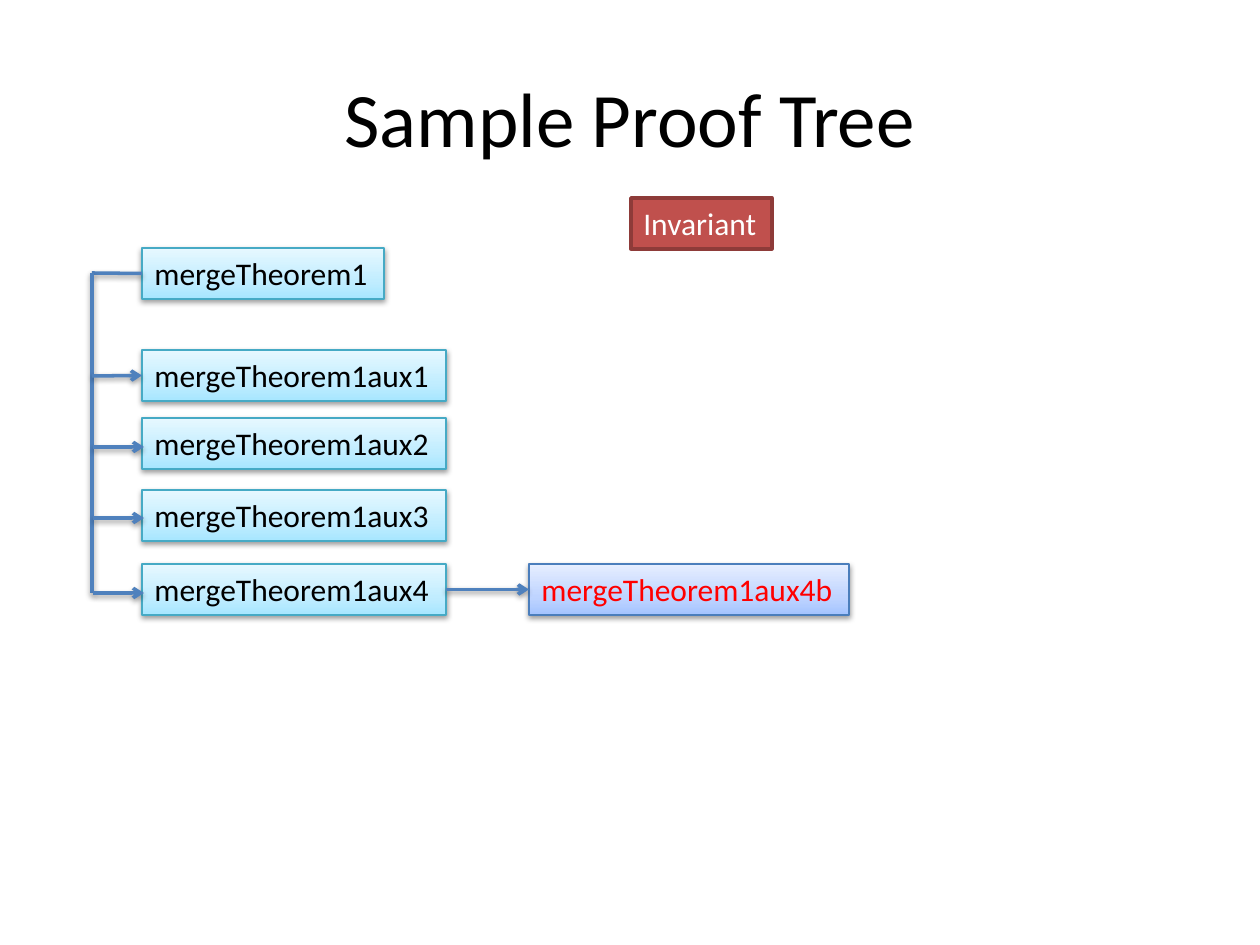
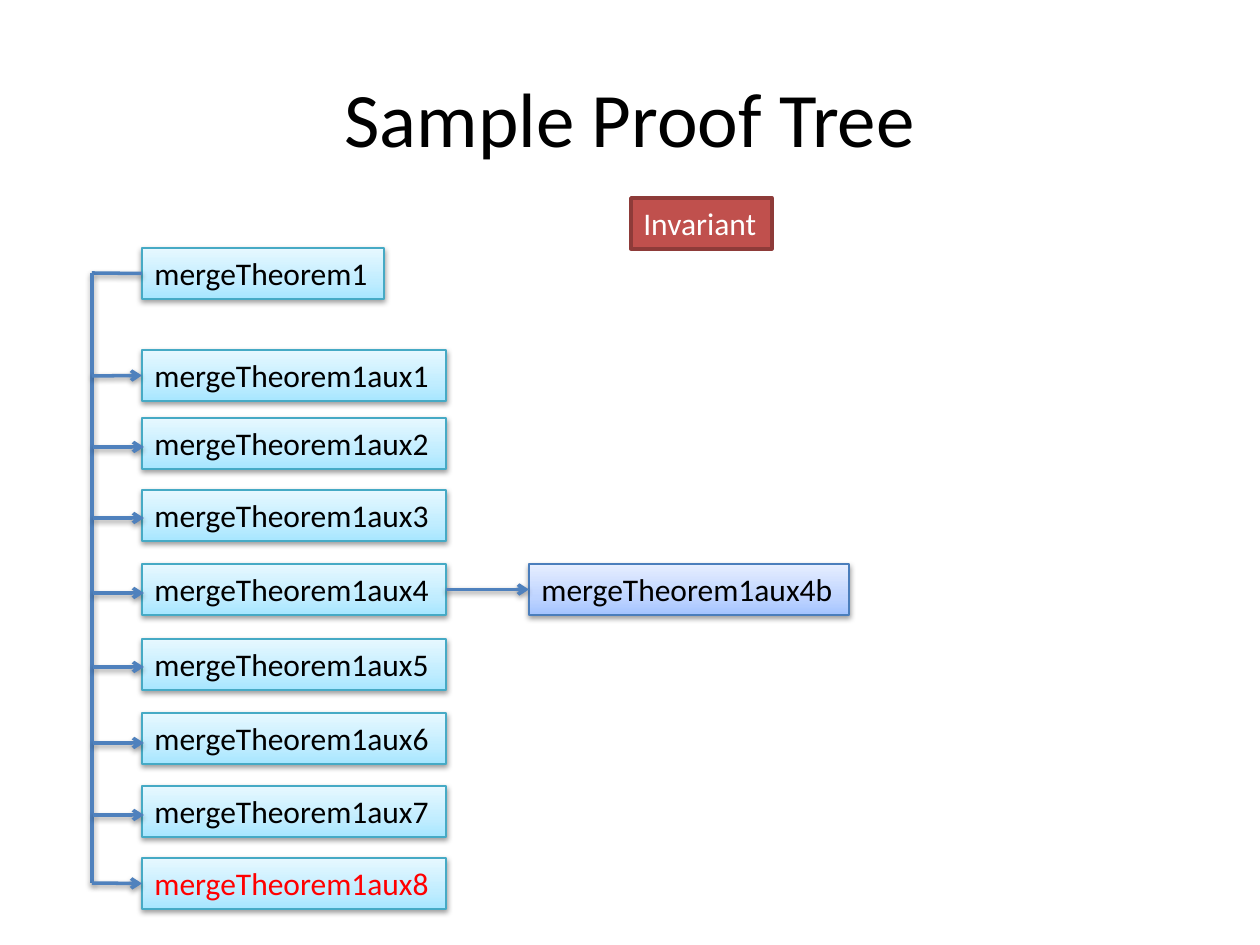
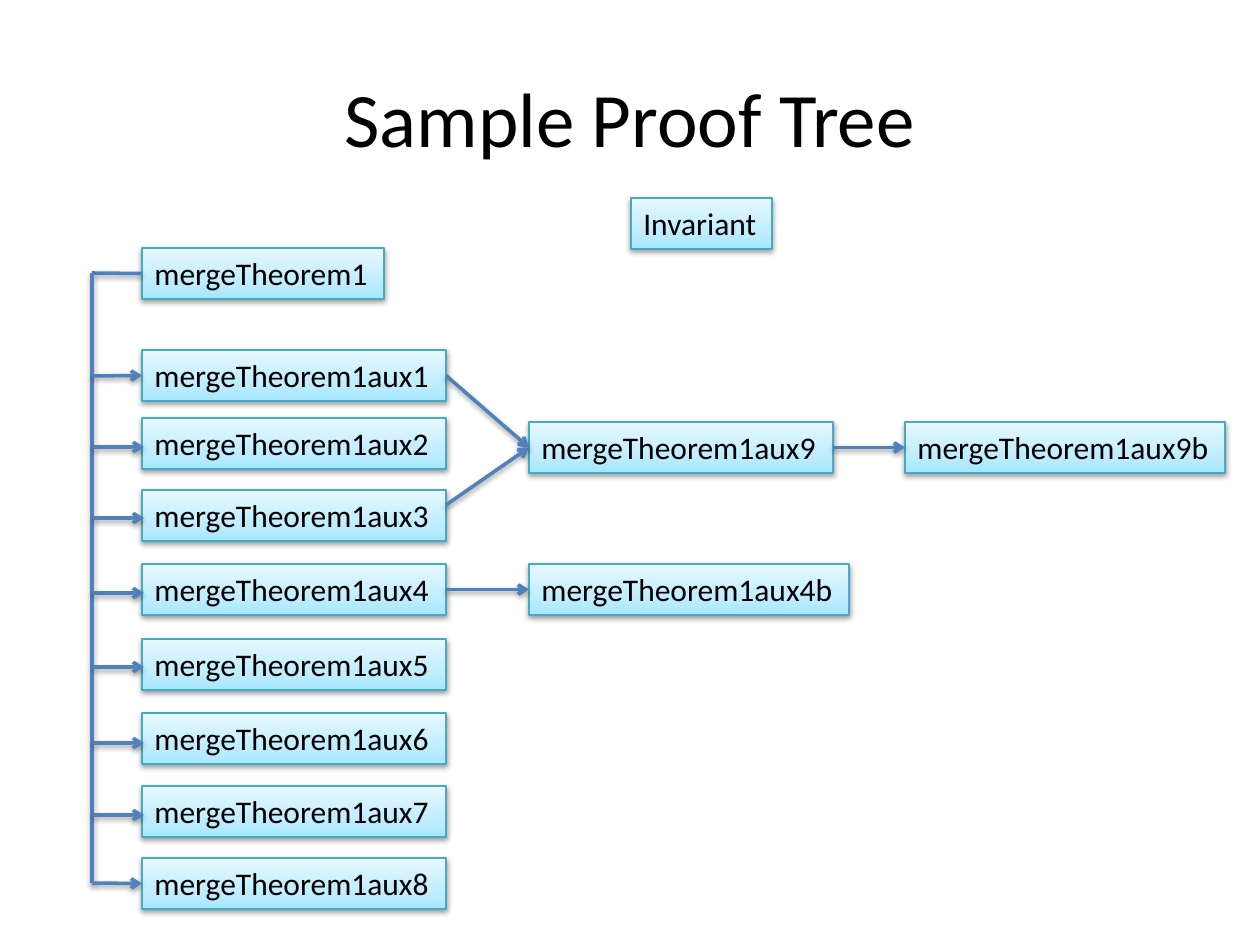
from collections import namedtuple

from pptx import Presentation
from pptx import util as u
from pptx.dml.color import RGBColor
from pptx.enum import shapes, text
from pptx.oxml import parse_xml
from pptx.oxml.ns import nsdecls

PX_PER_INCH = 126
FONT = "Calibri"
BLACK, WHITE, RED, ARROW_BLUE = "000000", "FFFFFF", "FF0000", "4F81BD"
TOP, LEFT, BOTTOM, RIGHT = range(4)

Look = namedtuple("Look", "fills line weight ink")
TEAL = Look(("A7E6FF", "C1EDFF", "E7F8FF"), "46AAC5", 0.75, BLACK)
BLUE = Look(("A4C4FF", "BFD4FF", "E6EEFF"), "4B7EBC", 0.75, BLACK)
CRIMSON = Look(("C0504D",), "8E3B39", 2, WHITE)

BOX_HEIGHT = 51
LEMMA_WIDTH, CASE_WIDTH = 304, 320
TREE_X, TRUNK_X, SECOND_X, THIRD_X = 142, 92, 529, 905
ROOT_Y = 248
LEMMA_TOPS = (350, 418, 490, 564, 639, 713, 786, 858)
BRANCH_YS = (376, 447, 518, 593, 667, 743, 815, 883)


def px(length):
    """Turn pixels into EMU."""
    return u.Emu(round(length * u.Inches(1) / PX_PER_INCH))


def color(code):
    """Turn a hex string into a colour."""
    return RGBColor.from_string(code)


def add_span(para, words, size, ink):
    """Add one run of text to a paragraph."""
    span = para.add_run()
    span.text = words
    span.font.name = FONT
    span.font.size = u.Pt(size)
    span.font.color.rgb = color(ink)


def add_shadow(item):
    """Give a shape or connector the soft shadow below it."""
    item._element.spPr.append(parse_xml(
        f'<a:effectLst {nsdecls("a")}>'
        '<a:outerShdw blurRad="40000" dist="20000" dir="5400000" rotWithShape="0">'
        f'<a:srgbClr val="{BLACK}"><a:alpha val="38000"/></a:srgbClr>'
        '</a:outerShdw></a:effectLst>'))


def fill_gradient(box, fills):
    """Fill a shape with three colours running from bottom to top."""
    stops = "".join(
        f'<a:gs pos="{place}"><a:srgbClr val="{code}"/></a:gs>'
        for place, code in zip((0, 35000, 100000), fills))
    box._element.spPr.insert(2, parse_xml(
        f'<a:gradFill {nsdecls("a")} rotWithShape="1"><a:gsLst>{stops}</a:gsLst>'
        '<a:lin ang="16200000" scaled="0"/></a:gradFill>'))


def add_title(page, words):
    """Add the centred slide title."""
    box = page.shapes.add_textbox(px(63), px(38), px(1134), px(157))
    frame = box.text_frame
    frame.word_wrap = True
    frame.vertical_anchor = text.MSO_ANCHOR.MIDDLE
    para = frame.paragraphs[0]
    para.alignment = text.PP_ALIGN.CENTER
    add_span(para, words, 44, BLACK)


def add_node(page, words, left, top, width, look=TEAL, ink=None):
    """Add one labelled box of the proof tree."""
    box = page.shapes.add_shape(shapes.MSO_SHAPE.RECTANGLE,
                                px(left), px(top), px(width), px(BOX_HEIGHT))
    if len(look.fills) > 1:
        fill_gradient(box, look.fills)
    else:
        box.fill.solid()
        box.fill.fore_color.rgb = color(look.fills[0])
    box.line.color.rgb = color(look.line)
    box.line.width = u.Pt(look.weight)
    if look is CRIMSON:
        box.shadow.inherit = False
    else:
        add_shadow(box)
    frame = box.text_frame
    frame.word_wrap = False
    frame.auto_size = text.MSO_AUTO_SIZE.SHAPE_TO_FIT_TEXT
    frame.vertical_anchor = text.MSO_ANCHOR.TOP
    para = frame.paragraphs[0]
    para.alignment = text.PP_ALIGN.LEFT
    add_span(para, words, 18, ink or look.ink)
    return box


def add_link(page, start=(0, 0), end=(0, 0), source=None, target=None, arrow=True):
    """Draw a line between points, or between (box, side) joints."""
    link = page.shapes.add_connector(shapes.MSO_CONNECTOR.STRAIGHT,
                                     *map(px, (*start, *end)))
    if source:
        link.begin_connect(*source)
    if target:
        link.end_connect(*target)
    link.line.color.rgb = color(ARROW_BLUE)
    link.line.width = u.Pt(2)
    if arrow:
        link.line._get_or_add_ln().append(
            parse_xml(f'<a:tailEnd {nsdecls("a")} type="arrow"/>'))
    add_shadow(link)


def add_trunk(page, root, lemmas):
    """Link the root to every lemma through one vertical trunk."""
    trunk_top = (TRUNK_X, ROOT_Y + BOX_HEIGHT // 2)
    branches = BRANCH_YS[:len(lemmas)]
    add_link(page, end=trunk_top, source=(root, LEFT), arrow=False)
    add_link(page, trunk_top, (TRUNK_X, branches[-1]), arrow=False)
    for lemma, top, y in zip(lemmas, LEMMA_TOPS, branches):
        if abs(top + BOX_HEIGHT / 2 - y) < 1:
            add_link(page, (TRUNK_X, y), target=(lemma, LEFT))
        else:
            add_link(page, (TRUNK_X + 1, y), (TREE_X + 2, y))


def add_tree(deck, lemma_count, invariant_look, case_look, red=""):
    """Add a slide with the shared proof tree and return it with its lemmas."""
    def ink(name):
        return RED if name == red else None

    page = deck.slides.add_slide(deck.slide_layouts[6])
    add_title(page, "Sample Proof Tree")
    root = add_node(page, "mergeTheorem1", TREE_X, ROOT_Y, 242)
    lemmas = []
    for number, top in enumerate(LEMMA_TOPS[:lemma_count], 1):
        name = f"mergeTheorem1aux{number}"
        lemmas.append(add_node(page, name, TREE_X, top, LEMMA_WIDTH, ink=ink(name)))
    add_trunk(page, root, lemmas)
    add_node(page, "Invariant", 631, 198, 141, invariant_look)
    name = "mergeTheorem1aux4b"
    case = add_node(page, name, SECOND_X, LEMMA_TOPS[3], CASE_WIDTH, case_look, ink(name))
    add_link(page, source=(lemmas[3], RIGHT), target=(case, LEFT))
    return page, lemmas


def add_shared_lemma(page, lemmas):
    """Add the lemma that aux1 and aux3 both lead to, and its follow-up."""
    shared = add_node(page, "mergeTheorem1aux9", SECOND_X, 422, LEMMA_WIDTH)
    follow_up = add_node(page, "mergeTheorem1aux9b", THIRD_X, 422, CASE_WIDTH)
    add_link(page, source=(lemmas[0], RIGHT), target=(shared, LEFT))
    add_link(page, (TREE_X + LEMMA_WIDTH, 505), target=(shared, LEFT))
    add_link(page, source=(shared, RIGHT), target=(follow_up, LEFT))


def main():
    """Build the three stages of the proof tree."""
    deck = Presentation()
    deck.slide_width, deck.slide_height = px(1260), px(945)
    add_tree(deck, 4, CRIMSON, BLUE, red="mergeTheorem1aux4b")
    add_tree(deck, 8, CRIMSON, BLUE, red="mergeTheorem1aux8")
    page, lemmas = add_tree(deck, 8, TEAL, TEAL)
    add_shared_lemma(page, lemmas)
    deck.save("out.pptx")


if __name__ == "__main__":
    main()
